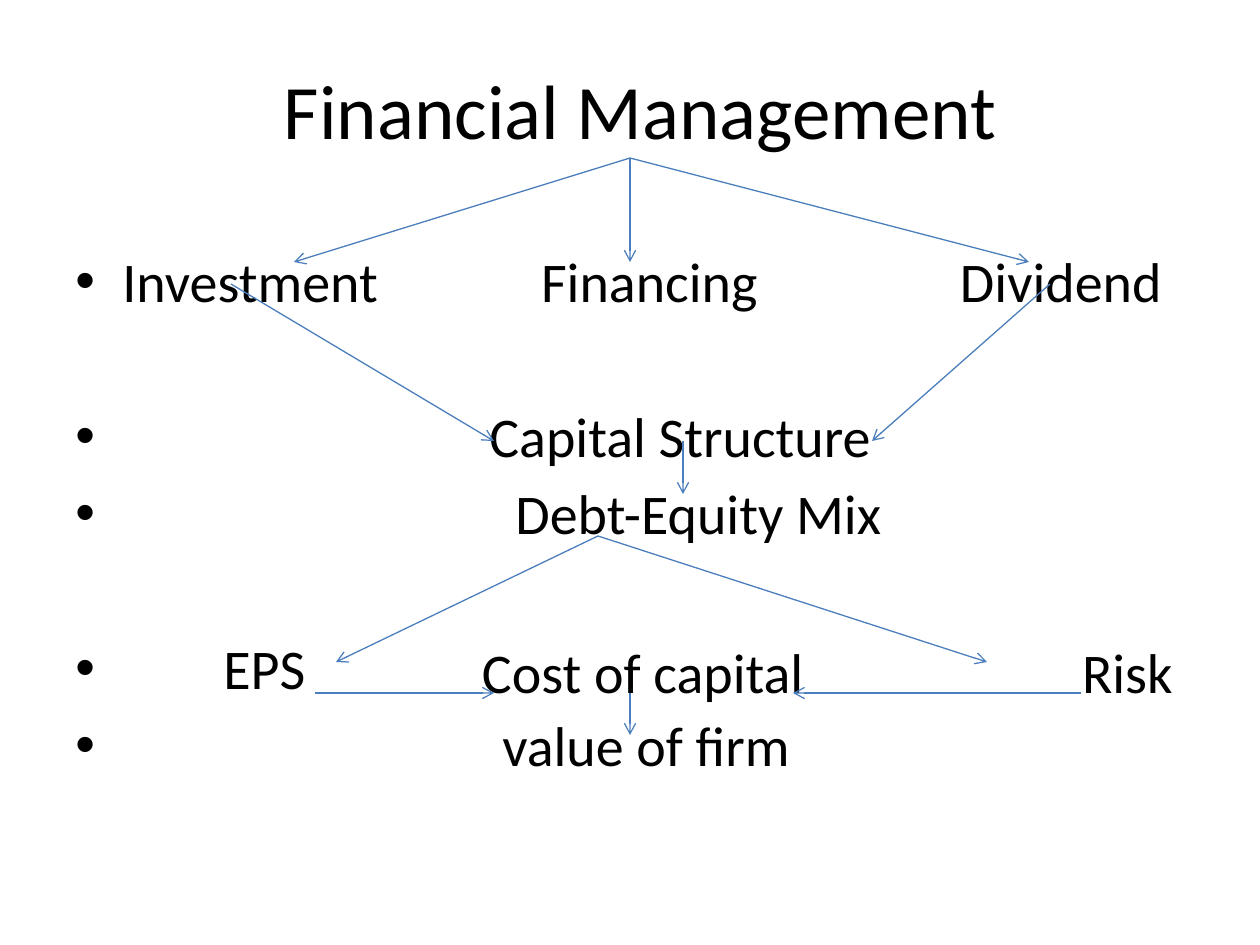
from lxml.etree import SubElement
from pptx import Presentation
from pptx.dml.color import RGBColor
from pptx.enum.shapes import MSO_CONNECTOR as Connector
from pptx.enum.text import MSO_ANCHOR as Anchor, PP_ALIGN as Align
from pptx.oxml.ns import qn
from pptx.util import Emu, Pt

PX = 914400 / 126


def px(length):
    return Emu(round(length * PX))


def color(hex_string):
    return RGBColor.from_string(hex_string)


class Deck:
    font, text_color, line_color = "Calibri", "000000", "4B7EBC"
    title_size, body_size = 44, 32

    def __init__(self, width, height):
        self.prs = Presentation()
        self.prs.slide_width, self.prs.slide_height = px(width), px(height)
        self.slide = self.prs.slides.add_slide(self.prs.slide_layouts[6])

    def frame(self, left, top, width, height):
        box = self.slide.shapes.add_textbox(px(left), px(top), px(width), px(height))
        box.text_frame.word_wrap = True
        return box.text_frame

    def run(self, paragraph, text, size):
        run = paragraph.add_run()
        run.text = text
        run.font.name, run.font.size = self.font, Pt(size)
        run.font.color.rgb = color(self.text_color)

    def title(self, text, *area):
        frame = self.frame(*area)
        frame.vertical_anchor = Anchor.MIDDLE
        frame.paragraphs[0].alignment = Align.CENTER
        self.run(frame.paragraphs[0], text, self.title_size)

    def bullets(self, items, top_margin, *area):
        """Each item is (text, hanging indent, space before)."""
        frame = self.frame(*area)
        frame.margin_top = px(top_margin)
        for number, (text, indent, gap) in enumerate(items):
            paragraph = frame.add_paragraph() if number else frame.paragraphs[0]
            paragraph.space_before = px(gap)
            self.run(paragraph, text, self.body_size)
            props = paragraph._p.get_or_add_pPr()
            props.set("marL", str(px(indent)))
            props.set("indent", str(-px(indent)))
            SubElement(props, qn("a:buFont"), typeface="Arial")
            SubElement(props, qn("a:buChar"), char="•")

    def label(self, text, *area):
        frame = self.frame(*area)
        frame.margin_left = frame.margin_right = 0
        frame.margin_top = frame.margin_bottom = 0
        frame.word_wrap = False
        self.run(frame.paragraphs[0], text, self.body_size)

    def arrow(self, start, end):
        line = self.slide.shapes.add_connector(
            Connector.STRAIGHT, *(px(value) for value in (*start, *end)))
        line.line.color.rgb = color(self.line_color)
        line.line.width = Pt(0.75)
        SubElement(line.line._get_or_add_ln(), qn("a:tailEnd"), type="arrow")
        SubElement(line._element.spPr, qn("a:effectLst"))


def main():
    deck = Deck(1260, 945)

    # Title
    deck.title("Financial Management", 84, 38, 1113, 141)

    # Bulleted levels; a wide gap opens each new group
    near, wide = 10, 88
    deck.bullets([
        ("Investment", 47, 0),
        ("Capital Structure", 414, wide),
        ("Debt-Equity Mix", 440, near),
        ("EPS", 148, wide),
        ("value of firm", 427, near),
    ], 88, 63, 158, 1134, 687)

    # Further columns of the decision and outcome levels
    decisions, outcomes = 246, 638
    for text, left, top, width in [
        ("Financing", 541, decisions, 220),
        ("Dividend", 960, decisions, 205),
        ("Cost of capital", 482, outcomes, 325),
        ("Risk", 1082, outcomes, 95),
    ]:
        deck.label(text, left, top, width, 68)

    # Arrows, grouped by the point they leave from
    flows = {
        (630, 158): [(294, 262), (630, 262), (1029, 262)],
        (231, 284): [(494, 441)],
        (1050, 284): [(872, 441)],
        (683, 441): [(683, 494)],
        (598, 536): [(336, 662), (987, 662)],
        (315, 693): [(494, 693)],
        (1081, 693): [(793, 693)],
        (630, 693): [(630, 735)],
    }
    for start, ends in flows.items():
        for end in ends:
            deck.arrow(start, end)

    deck.prs.save("out.pptx")


if __name__ == "__main__":
    main()
